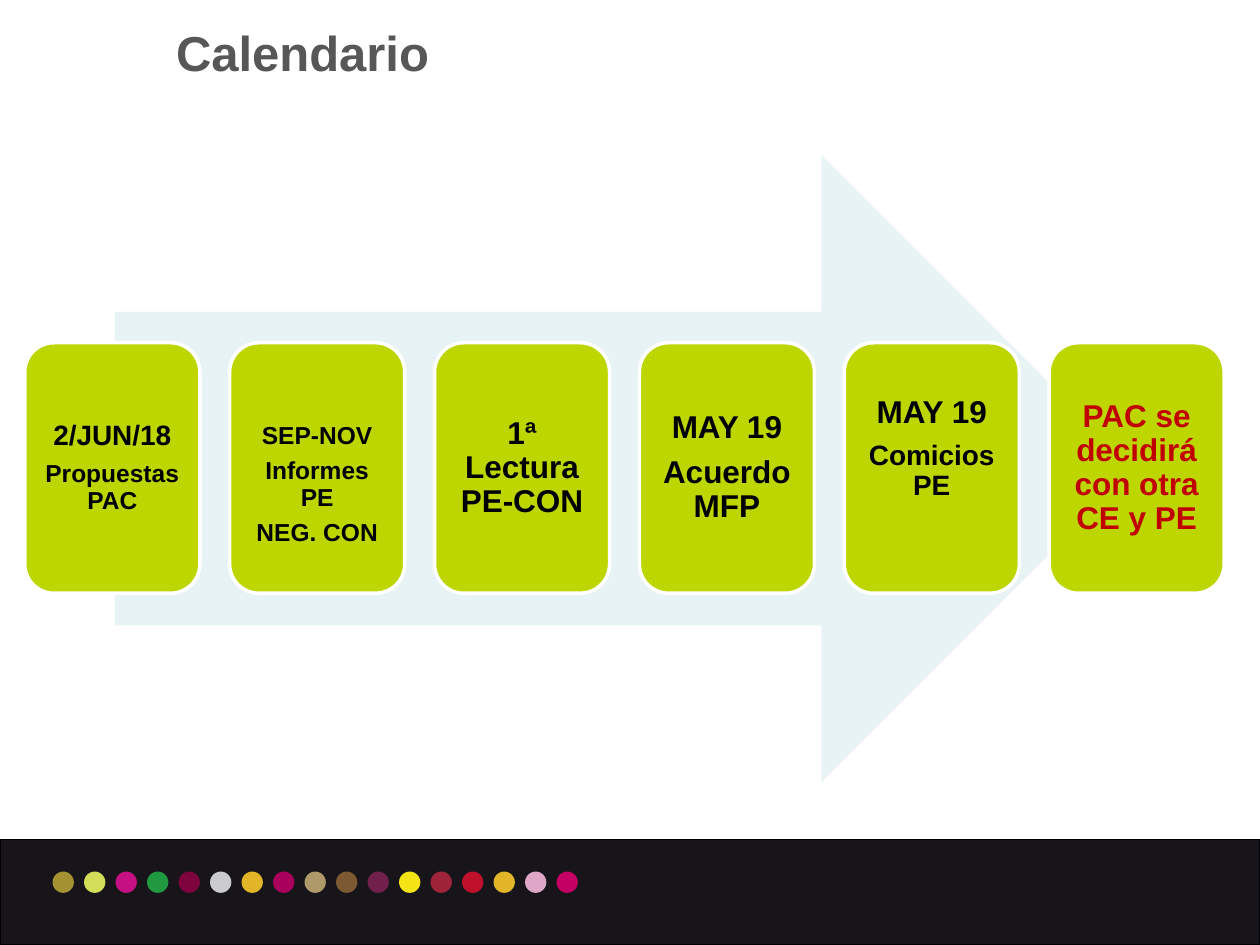
from dataclasses import dataclass

from pptx import Presentation
from pptx.dml.color import RGBColor
from pptx.enum.shapes import MSO_SHAPE
from pptx.enum.text import MSO_ANCHOR, PP_ALIGN
from pptx.shapes.autoshape import Shape
from pptx.slide import Slide
from pptx.text.text import _Paragraph
from pptx.util import Cm, Pt

FONT = "Arial"
INSET = 0.15

DOT_COLOURS = (
    "A59233", "D3DD58", "C51083", "219940", "7E043D", "CBCBCD", "E2B528", "A9005D",
    "AF996A", "7C5931", "71204B", "F4E415", "9F2439", "BF112C", "E2B528", "DEA7C7",
    "C40064",
)


@dataclass(frozen=True)
class Line:
    text: str
    size: int


@dataclass(frozen=True)
class Milestone:
    lines: tuple[Line, ...]
    colour: str = "000000"
    push_down: float = 0  # extra top margin, cm
    push_up: float = 0  # extra bottom margin, cm


MILESTONES = (
    Milestone((Line("2/JUN/18", 16), Line("Propuestas PAC", 14))),
    Milestone(
        (Line("SEP-NOV", 14), Line("Informes PE", 14), Line("NEG. CON", 14)),
        push_down=0.68,
    ),
    Milestone((Line("1ª Lectura PE-CON", 18),)),
    Milestone((Line("MAY 19", 18), Line("Acuerdo MFP", 18))),
    Milestone((Line("MAY 19", 18), Line("Comicios PE", 16)), push_up=0.78),
    Milestone((Line("PAC se decidirá con otra CE y PE", 18),), colour="C00000"),
)


def rgb(colour: str) -> RGBColor:
    return RGBColor.from_string(colour)


def add_filled(slide: Slide, kind: MSO_SHAPE, left: float, top: float, width: float,
               height: float, fill: str, line: str = "", line_width: float = 0) -> Shape:
    shape = slide.shapes.add_shape(kind, Cm(left), Cm(top), Cm(width), Cm(height))
    shape.shadow.inherit = False
    shape.fill.solid()
    shape.fill.fore_color.rgb = rgb(fill)
    if line:
        shape.line.color.rgb = rgb(line)
        shape.line.width = Pt(line_width)
    else:
        shape.line.fill.background()
    return shape


def add_bold_run(paragraph: _Paragraph, text: str, size: int, colour: str) -> None:
    run = paragraph.add_run()
    run.text = text
    run.font.name = FONT
    run.font.size = Pt(size)
    run.font.bold = True
    run.font.color.rgb = rgb(colour)


def add_milestone(slide: Slide, milestone: Milestone, left: float) -> None:
    card = add_filled(slide, MSO_SHAPE.ROUNDED_RECTANGLE, left, 6.91, 3.53, 5.05,
                      "BED600", "FFFFFF", 2)
    frame = card.text_frame
    frame.word_wrap = True
    frame.vertical_anchor = MSO_ANCHOR.MIDDLE
    frame.margin_left = frame.margin_right = Cm(INSET)
    frame.margin_top = Cm(INSET + milestone.push_down)
    frame.margin_bottom = Cm(INSET + milestone.push_up)
    for index, line in enumerate(milestone.lines):
        paragraph = frame.add_paragraph() if index else frame.paragraphs[0]
        paragraph.alignment = PP_ALIGN.CENTER
        paragraph.line_spacing = 0.9
        paragraph.space_after = Pt(round(0.35 * line.size, 1))
        add_bold_run(paragraph, line.text, line.size, milestone.colour)


def add_title(slide: Slide, text: str) -> None:
    title = slide.shapes.add_textbox(Cm(3.3), Cm(0.33), Cm(20.75), Cm(2.11))
    title.text_frame.word_wrap = True
    add_bold_run(title.text_frame.paragraphs[0], text, 28, "575757")


def main() -> None:
    presentation = Presentation()
    presentation.slide_width = Cm(25.4)
    presentation.slide_height = Cm(19.05)
    slide = presentation.slides.add_slide(presentation.slide_layouts[6])

    # Footer band with its row of dots
    add_filled(slide, MSO_SHAPE.RECTANGLE, 0, 16.92, 25.4, 2.13, "17151A", "000000", 0.75)
    for index, colour in enumerate(DOT_COLOURS):
        add_filled(slide, MSO_SHAPE.OVAL, 1.06 + index * 0.635, 17.57, 0.43, 0.43, colour)

    add_title(slide, "Calendario")

    # Timeline: arrow behind evenly spaced milestones
    add_filled(slide, MSO_SHAPE.RIGHT_ARROW, 2.31, 3.13, 20.57, 12.64, "E7F3F4")
    for index, milestone in enumerate(MILESTONES):
        add_milestone(slide, milestone, 0.5 + index * 4.13)

    presentation.save("out.pptx")


if __name__ == "__main__":
    main()
